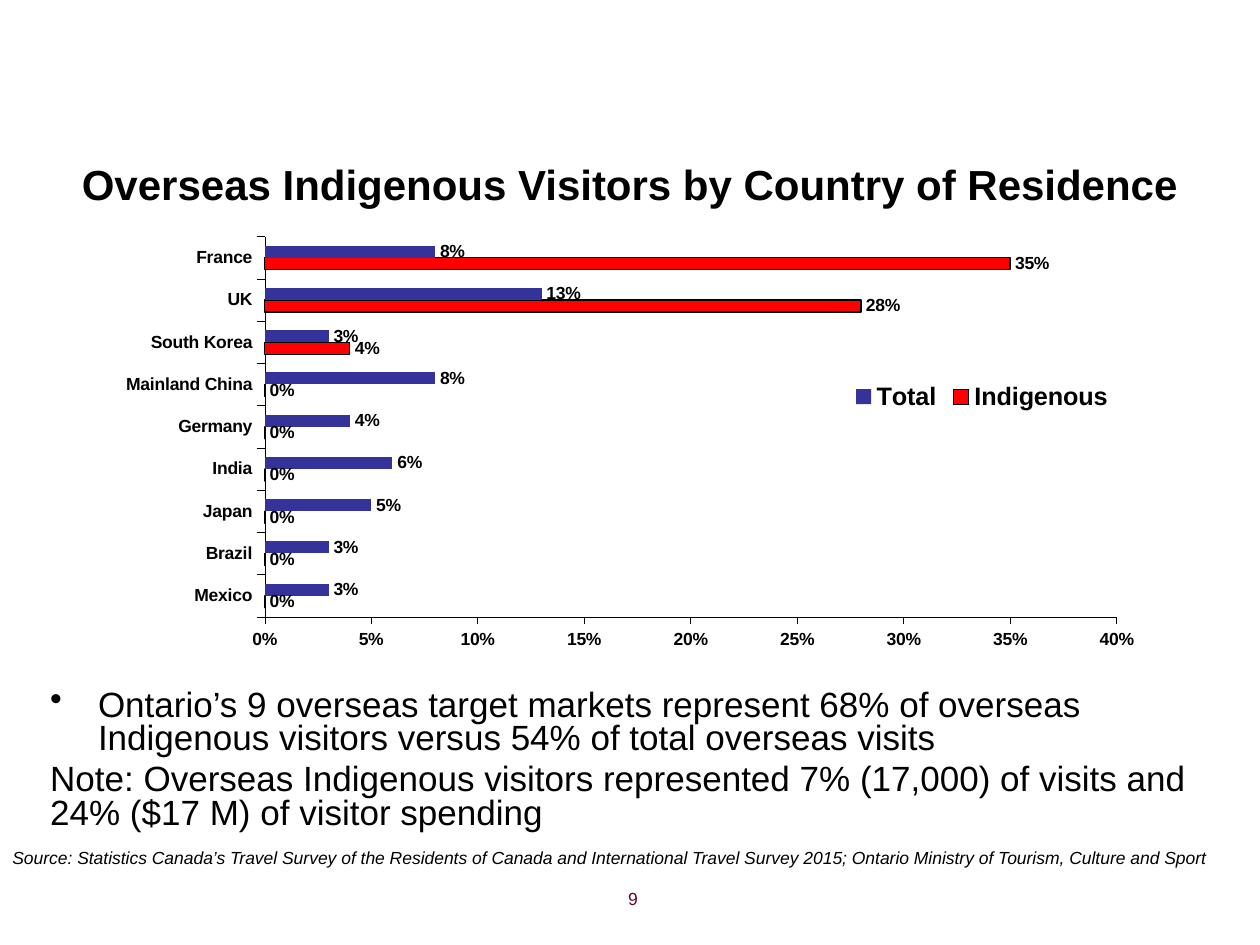
from lxml import etree
from pptx import Presentation
from pptx.chart.data import CategoryChartData
from pptx.dml.color import RGBColor
from pptx.enum.chart import XL_CHART_TYPE as ChartType, XL_LABEL_POSITION as LabelPos
from pptx.enum.chart import XL_LEGEND_POSITION as LegendPos, XL_TICK_MARK as Tick
from pptx.enum.text import MSO_ANCHOR as Anchor, PP_ALIGN as Align
from pptx.oxml.ns import qn
from pptx.util import Inches, Pt

W, H = 10, 7.5
BLACK, RED, BLUE, PLUM = "000000", "FF0000", "333399", "660033"
VISITORS = [
    ("Mexico", 0, 0.03), ("Brazil", 0, 0.03), ("Japan", 0, 0.05),
    ("India", 0, 0.06), ("Germany", 0, 0.04), ("Mainland China", 0, 0.08),
    ("South Korea", 0.04, 0.03), ("UK", 0.28, 0.13), ("France", 0.35, 0.08),
]


def rgb(value):
    """Turn a hex string into a colour."""
    return RGBColor.from_string(value)


def set_font(font, size, color=BLACK, bold=False, italic=False):
    """Style a font in Arial."""
    font.name, font.size = "Arial", Pt(size)
    font.bold, font.italic = bold, italic
    font.color.rgb = rgb(color)


def add_text(s, box, lines, size, align=Align.LEFT, anchor=Anchor.TOP, **style):
    """Add a wrapped text box and return its paragraphs."""
    tf = s.shapes.add_textbox(*map(Inches, box)).text_frame
    tf.word_wrap, tf.vertical_anchor = True, anchor
    tf.text = "\n".join(lines)
    for p in tf.paragraphs:
        p.alignment = align
        set_font(p.font, size, **style)
    return tf.paragraphs


def add_layout(parent, x, y, w, h, inner=False):
    """Place a chart part by shares of the chart's size."""
    for old in parent.findall(qn("c:layout")):
        parent.remove(old)
    layout = etree.Element(qn("c:layout"))
    manual = etree.SubElement(layout, qn("c:manualLayout"))
    rules = [("layoutTarget", "inner")] if inner else []
    rules += [("xMode", "edge"), ("yMode", "edge"), ("x", x), ("y", y), ("w", w), ("h", h)]
    for tag, val in rules:
        etree.SubElement(manual, qn(f"c:{tag}")).set("val", str(val))
    parent.insert(0 if inner else 1, layout)


def style_axis(axis):
    """Give an axis thin black lines, outer ticks and bold labels."""
    axis.has_major_gridlines = False
    axis.major_tick_mark, axis.minor_tick_mark = Tick.OUTSIDE, Tick.NONE
    axis.format.line.color.rgb = rgb(BLACK)
    axis.format.line.width = Pt(0.17)
    set_font(axis.tick_labels.font, 10, bold=True)


def style_series(series, color):
    """Fill a series and label its bars."""
    series.format.fill.solid()
    series.format.fill.fore_color.rgb = rgb(color)
    series.invert_if_negative = False
    labels = series.data_labels
    labels.show_value, labels.position = True, LabelPos.OUTSIDE_END
    labels.number_format, labels.number_format_is_linked = "0%", False
    set_font(labels.font, 10, bold=True)


def add_visitor_chart(s, box):
    """Add the bar chart of visitor shares by country."""
    countries, indigenous, total = zip(*VISITORS)
    data = CategoryChartData(number_format="0%")
    data.categories = countries
    data.add_series("Indigenous", indigenous)
    data.add_series("Total", total)
    chart = s.shapes.add_chart(ChartType.BAR_CLUSTERED, *map(Inches, box), data).chart
    chart.has_title = False
    set_font(chart.font, 14.4, bold=True)

    plot = chart.plots[0]
    plot.gap_width, plot.overlap, plot.vary_by_categories = 150, 0, False
    for series, color in zip(plot.series, (RED, BLUE)):
        style_series(series, color)
    outline = plot.series[0].format.line
    outline.color.rgb, outline.width = rgb(BLACK), Pt(0.68)

    style_axis(chart.category_axis)
    axis = chart.value_axis
    style_axis(axis)
    axis.minimum_scale, axis.maximum_scale, axis.major_unit = 0, 0.4, 0.05
    axis.tick_labels.number_format = "0%"
    axis.tick_labels.number_format_is_linked = False

    chart.has_legend = True
    legend = chart.legend
    legend.position, legend.include_in_layout = LegendPos.RIGHT, False
    set_font(legend.font, 14.4, bold=True)
    add_layout(legend._element, 0.72, 0.34, 0.25, 0.1)
    add_layout(plot._element.getparent(), 0.18, 0.02, 0.79, 0.88, inner=True)


def add_findings(s, box):
    """Add the bulleted finding and the note below it."""
    lines = [
        "Ontario’s 9 overseas target markets represent 68% of overseas "
        "Indigenous visitors versus 54% of total overseas visits",
        "Note: Overseas Indigenous visitors represented 7% (17,000) of visits "
        "and 24% ($17 M) of visitor spending",
    ]
    finding, note = add_text(s, box, lines, 20)
    finding.line_spacing = note.line_spacing = 0.8
    note.space_before = Pt(4)
    pPr = finding._p.get_or_add_pPr()
    pPr.set("marL", str(Inches(0.38)))
    pPr.set("indent", str(Inches(-0.38)))
    bullet = etree.Element(qn("a:buChar"), char="•")
    pPr.find(qn("a:defRPr")).addprevious(bullet)


def add_footer(s, box):
    """Add the source line and the page number."""
    x, y, w, h = box
    source = ("Source: Statistics Canada’s Travel Survey of the Residents of Canada and "
              "International Travel Survey 2015; Ontario Ministry of Tourism, Culture and Sport")
    add_text(s, (x, y, w, 0.27), [source], 10, italic=True)
    add_text(s, (2.83, y + h - 0.35, 2.33, 0.35), ["9"], 10, Align.RIGHT, color=PLUM)


def main():
    """Build and save the slide."""
    prs = Presentation()
    prs.slide_width, prs.slide_height = Inches(W), Inches(H)
    s = prs.slides.add_slide(prs.slide_layouts[6])
    add_text(s, (0, 1.17, W, 0.58), ["Overseas Indigenous Visitors by Country of Residence"],
             24, Align.CENTER, Anchor.MIDDLE, bold=True)
    add_visitor_chart(s, (0.56, 1.81, 8.56, 3.43))
    add_findings(s, (0.3, 5.43, 9.5, 1.33))
    add_footer(s, (0, 6.67, 9.8, 0.68))
    prs.save("out.pptx")


if __name__ == "__main__":
    main()
